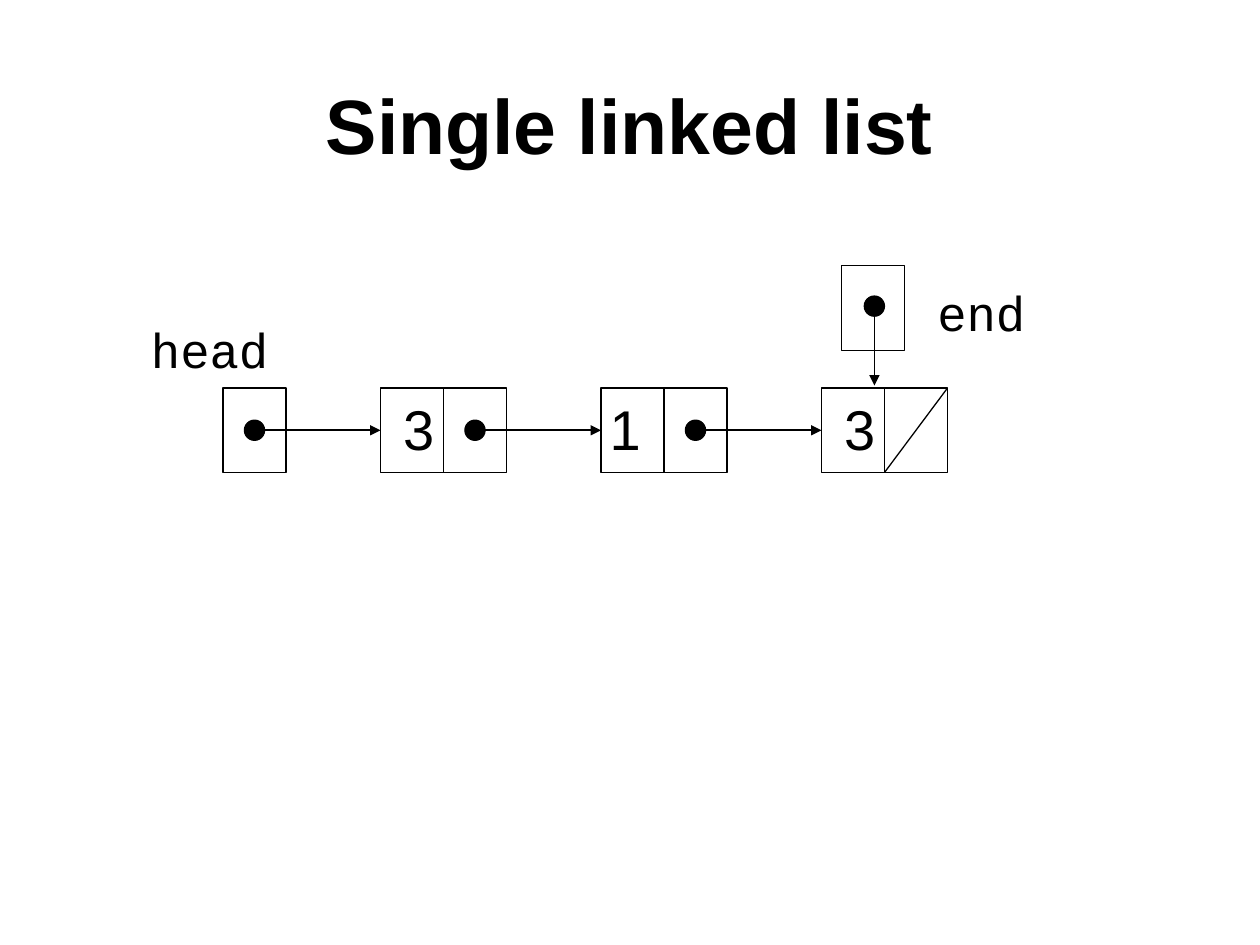
from dataclasses import dataclass

from lxml import etree
from pptx import Presentation
from pptx import util as u
from pptx.dml.color import RGBColor
from pptx.enum import shapes, text
from pptx.oxml import ns


@dataclass(frozen=True)
class Theme:
    ink: RGBColor = RGBColor(0, 0, 0)
    sans: str = "Arial"
    mono: str = "Courier New"
    title: int = 44
    value: int = 32
    label: int = 28
    outline: float = 0.75
    arrow: float = 1


THEME = Theme()
CELL_W, CELL_H = 0.5, 0.67
DOT = 0.16
LEFT, TOP = 1.77, 3.08
PITCH = 1.75
MIDDLE = TOP + CELL_H / 2
LEFT_SIDE = 1


def link_x(col):
    """Left edge of the pointer cell in a column; column 0 is the head."""
    return LEFT + col * PITCH


def add_text(slide, content, x, y, w, h, size, font=THEME.sans, bold=False,
             align=text.PP_ALIGN.LEFT, anchor=text.MSO_ANCHOR.TOP, wrap=False):
    tf = slide.shapes.add_textbox(*map(u.Inches, (x, y, w, h))).text_frame
    tf.word_wrap = wrap
    tf.vertical_anchor = anchor
    p = tf.paragraphs[0]
    p.alignment = align
    r = p.add_run()
    r.text = content
    r.font.name, r.font.size, r.font.bold = font, u.Pt(size), bold
    r.font.color.rgb = THEME.ink


def add_outlined(slide, kind, x, y, w, h):
    sp = slide.shapes.add_shape(kind, *map(u.Inches, (x, y, w, h)))
    sp.shadow.inherit = False
    sp.fill.background()
    sp.line.color.rgb = THEME.ink
    sp.line.width = u.Pt(THEME.outline)
    return sp


def add_cell(slide, x, y=TOP):
    return add_outlined(slide, shapes.MSO_SHAPE.RECTANGLE, x, y, CELL_W, CELL_H)


def add_dot(slide, cx, cy):
    sp = add_outlined(slide, shapes.MSO_SHAPE.OVAL,
                      cx - DOT / 2, cy - DOT / 2, DOT, DOT)
    sp.fill.solid()
    sp.fill.fore_color.rgb = THEME.ink


def add_line(slide, x1, y1, x2, y2, width=THEME.outline):
    line = slide.shapes.add_connector(shapes.MSO_CONNECTOR.STRAIGHT,
                                      *map(u.Inches, (x1, y1, x2, y2)))
    line.line.color.rgb = THEME.ink
    line.line.width = u.Pt(width)
    etree.SubElement(line.element.spPr, ns.qn("a:effectLst"))
    return line


def add_pointer(slide, x1, y1, x2, y2, target=None):
    """Dot with an arrow, joined to the left side of the target cell if given."""
    arrow = add_line(slide, x1, y1, x2, y2, THEME.arrow)
    etree.SubElement(arrow.line._get_or_add_ln(), ns.qn("a:tailEnd"),
                     type="triangle")
    if target is not None:
        arrow.end_connect(target, LEFT_SIDE)
    add_dot(slide, x1, y1)


def add_list(slide, nodes):
    """Head cell, then one value cell and one link cell for each node."""
    add_cell(slide, link_x(0))
    for col, (value, text_dx, align) in enumerate(nodes, start=1):
        x = link_x(col) - CELL_W
        value_cell = add_cell(slide, x)
        add_cell(slide, link_x(col))
        add_text(slide, value, x + text_dx, TOP, 0.42, 0.63, THEME.value,
                 align=align)
        add_pointer(slide, link_x(col - 1) + CELL_W / 2, MIDDLE, x, MIDDLE,
                    value_cell)
    null_x = link_x(len(nodes))
    add_line(slide, null_x + CELL_W, TOP, null_x, TOP + CELL_H)


def main():
    prs = Presentation()
    prs.slide_width, prs.slide_height = u.Inches(10), u.Inches(7.5)
    slide = prs.slides.add_slide(prs.slide_layouts[6])
    center, left = text.PP_ALIGN.CENTER, text.PP_ALIGN.LEFT

    add_text(slide, "Single linked list", 0.75, 0.36, 8.5, 1.25, THEME.title,
             bold=True, align=center, anchor=text.MSO_ANCHOR.MIDDLE, wrap=True)
    add_text(slide, "head", 1.1, 2.49, 1.14, 0.57, THEME.label, THEME.mono)
    add_list(slide, [("3", 0.08, center), ("1", -0.03, left),
                     ("3", 0.08, center)])

    add_cell(slide, 6.68, 2.11)
    add_text(slide, "end", 7.34, 2.19, 0.91, 0.57, THEME.label, THEME.mono)
    add_pointer(slide, 6.94, 2.43, 6.94, 3.06)

    prs.save("out.pptx")


if __name__ == "__main__":
    main()
